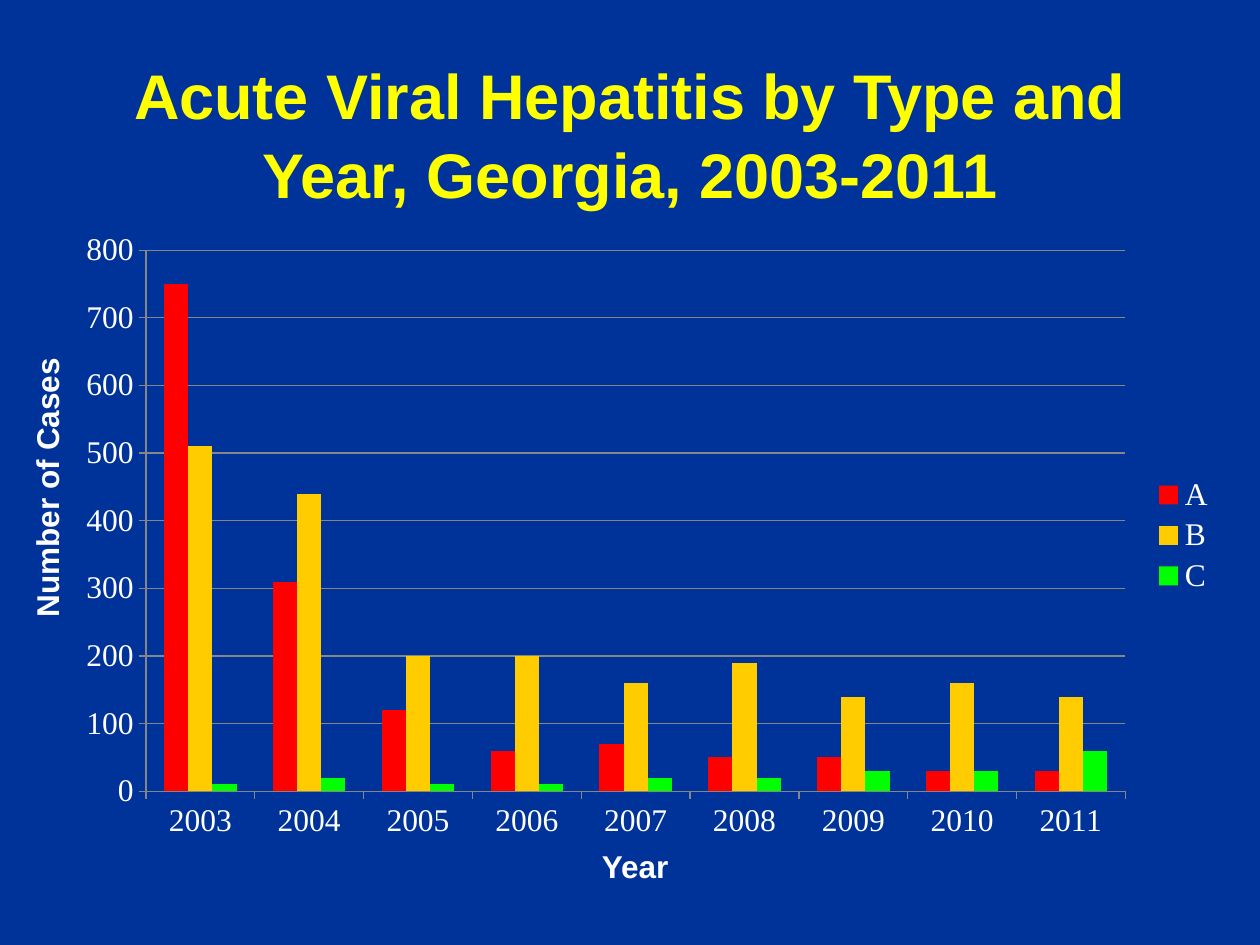
from pptx import Presentation
from pptx.chart.data import CategoryChartData
from pptx.dml.color import RGBColor
from pptx.enum.chart import XL_CHART_TYPE, XL_LEGEND_POSITION, XL_TICK_MARK
from pptx.enum.text import MSO_ANCHOR, MSO_AUTO_SIZE, PP_ALIGN
from pptx.util import Inches, Pt

YEARS = [str(year) for year in range(2003, 2012)]
CASES = {
    "A": ("FF0000", [750, 310, 120, 60, 70, 50, 50, 30, 30]),
    "B": ("FFCC00", [510, 440, 200, 200, 160, 190, 140, 160, 140]),
    "C": ("00FF00", [10, 20, 10, 10, 20, 20, 30, 30, 60]),
}
WHITE, YELLOW, BLUE, GRAY = "FFFFFF", "FFFF00", "003399", "868686"


def rgb(color):
    return RGBColor.from_string(color)


def style_font(font, size, color, name, bold=False):
    font.size, font.name, font.bold = Pt(size), name, bold
    font.color.rgb = rgb(color)


def set_text(sp, text, size, color):
    """Fill a shape with one centred, bold paragraph."""
    tf = sp.text_frame
    tf.text = text
    tf.word_wrap = True
    p = tf.paragraphs[0]
    p.alignment = PP_ALIGN.CENTER
    style_font(p.runs[0].font, size, color, "Arial", True)
    return tf


def add_title(s, text):
    sp = s.shapes.title
    sp.left, sp.top = Inches(0.75), Inches(0.42)
    sp.width, sp.height = Inches(8.5), Inches(1.25)
    tf = set_text(sp, text, 36, YELLOW)
    tf.auto_size = MSO_AUTO_SIZE.NONE
    tf.vertical_anchor = MSO_ANCHOR.MIDDLE
    tf.paragraphs[0].line_spacing = 1.05


def add_axis_label(s, text, left, top, width, rotation=0):
    sp = s.shapes.add_textbox(Inches(left), Inches(top), Inches(width), Inches(0.4))
    sp.rotation = rotation
    set_text(sp, text, 18, WHITE).auto_size = MSO_AUTO_SIZE.SHAPE_TO_FIT_TEXT


def style_axis(axis):
    axis.major_tick_mark = XL_TICK_MARK.OUTSIDE
    axis.format.line.color.rgb = rgb(GRAY)
    style_font(axis.tick_labels.font, 18, WHITE, "Times New Roman")


def add_case_chart(s):
    data = CategoryChartData()
    data.categories = YEARS
    for name, (_, values) in CASES.items():
        data.add_series(name, values)
    chart = s.shapes.add_chart(
        XL_CHART_TYPE.COLUMN_CLUSTERED,
        Inches(0.5), Inches(1.75), Inches(9.25), Inches(5), data).chart
    style_font(chart.font, 18, "000000", "Times New Roman")
    chart.has_title = False

    # Bars
    plot = chart.plots[0]
    plot.vary_by_categories = False
    plot.gap_width, plot.overlap = 150, 0
    for series, (color, _) in zip(plot.series, CASES.values()):
        series.format.fill.solid()
        series.format.fill.fore_color.rgb = rgb(color)

    # Axes and gridlines
    style_axis(chart.category_axis)
    axis = chart.value_axis
    style_axis(axis)
    axis.minimum_scale, axis.maximum_scale, axis.major_unit = 0, 800, 100
    axis.has_major_gridlines = True
    axis.major_gridlines.format.line.color.rgb = rgb(GRAY)

    # Legend
    chart.has_legend = True
    chart.legend.position = XL_LEGEND_POSITION.RIGHT
    chart.legend.include_in_layout = False
    style_font(chart.legend.font, 18, WHITE, "Times New Roman")


def main():
    prs = Presentation()
    prs.slide_width, prs.slide_height = Inches(10), Inches(7.5)
    s = prs.slides.add_slide(prs.slide_layouts[5])
    s.background.fill.solid()
    s.background.fill.fore_color.rgb = rgb(BLUE)

    add_title(s, "Acute Viral Hepatitis by Type and Year, Georgia, 2003-2011")
    add_case_chart(s)
    add_axis_label(s, "Number of Cases", -1.34, 3.67, 3.42, 270)
    add_axis_label(s, "Year", 4.33, 6.67, 1.42)
    prs.save("out.pptx")


if __name__ == "__main__":
    main()
